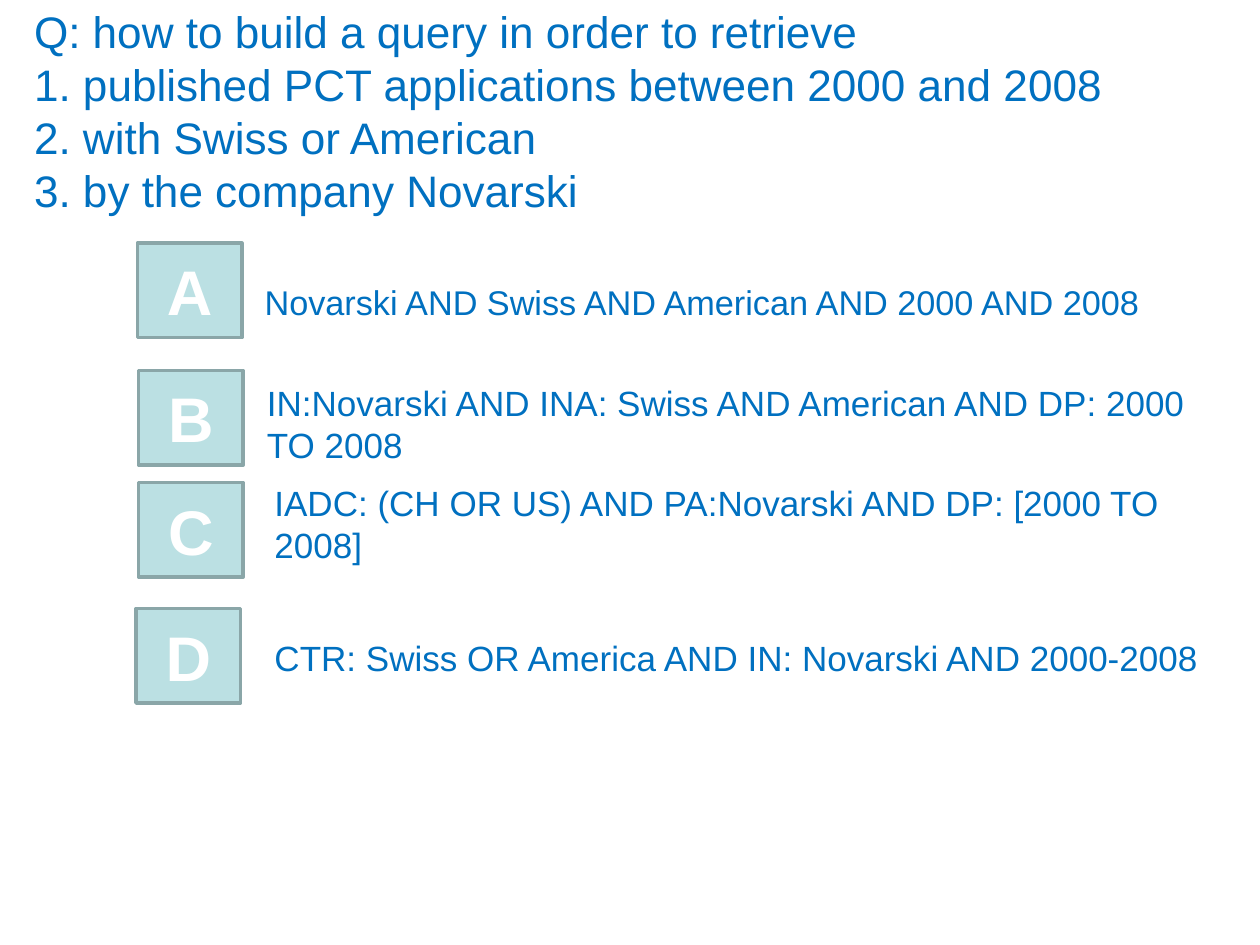
import pptx
import pptx.dml.color
import pptx.enum.shapes
import pptx.enum.text
import pptx.oxml
import pptx.util

Inches = pptx.util.Inches
ANCHOR = pptx.enum.text.MSO_ANCHOR
ALIGN = pptx.enum.text.PP_ALIGN
AUTO_SIZE = pptx.enum.text.MSO_AUTO_SIZE
BUTTON = pptx.enum.shapes.MSO_SHAPE.ACTION_BUTTON_CUSTOM

THEME = {
    "font": "Arial",
    "blue": "0070C0",
    "white": "FFFFFF",
    "button_fill": "BBE0E3",
    "button_line": "8AA6A8",
    "title_size": 25.2,
    "body_size": 19.6,
    "answer_size": 20,
    "letter_size": 36,
}
BUTTON_WIDTH, BUTTON_HEIGHT = 0.83, 0.75


def rgb(name):
    return pptx.dml.color.RGBColor.from_string(THEME[name])


def write_text(shape, text, size, color="blue", bold=False, align=ALIGN.LEFT,
               anchor=ANCHOR.TOP, auto_size=AUTO_SIZE.NONE):
    frame = shape.text_frame
    frame_format = {"word_wrap": True, "auto_size": auto_size, "vertical_anchor": anchor}
    for name, value in frame_format.items():
        setattr(frame, name, value)
    paragraph = frame.paragraphs[0]
    paragraph.text = text
    paragraph.alignment = align
    paragraph.space_before = pptx.util.Pt(0)
    font_format = {"name": THEME["font"], "size": pptx.util.Pt(THEME[size]), "bold": bold}
    for run in paragraph.runs:
        for name, value in font_format.items():
            setattr(run.font, name, value)
        run.font.color.rgb = rgb(color)


presentation = pptx.Presentation()
presentation.slide_width = Inches(10)
presentation.slide_height = Inches(7.5)
slide = presentation.slides.add_slide(presentation.slide_layouts[1])
title, body = slide.placeholders

# Question and first answer
placements = [(title, (0.17, 0.25, 9, 1.25)), (body, (2, 2.18, 7.67, 0.55))]
for shape, box in placements:
    for side, length in zip(("left", "top", "width", "height"), box):
        setattr(shape, side, Inches(length))

question = [
    "Q: how to build a query in order to retrieve",
    "1. published PCT applications between 2000 and 2008",
    "2. with Swiss or American",
    "3. by the company Novarski",
]
write_text(title, "\v".join(question), "title_size", anchor=ANCHOR.MIDDLE)

properties = body.text_frame.paragraphs[0]._p.get_or_add_pPr()
properties.set("marL", "0")
properties.set("indent", "0")
properties.append(pptx.oxml.parse_xml(
    '<a:buNone xmlns:a="http://schemas.openxmlformats.org/drawingml/2006/main"/>'))
write_text(body, "Novarski AND Swiss AND American AND 2000 AND 2008", "body_size")

# Lettered buttons
for letter, left, top in (("A", 1.09, 1.93), ("B", 1.1, 2.94), ("C", 1.1, 3.83), ("D", 1.08, 4.83)):
    button = slide.shapes.add_shape(
        BUTTON, Inches(left), Inches(top), Inches(BUTTON_WIDTH), Inches(BUTTON_HEIGHT))
    button.shadow.inherit = False
    button.fill.solid()
    button.fill.fore_color.rgb = rgb("button_fill")
    button.line.color.rgb = rgb("button_line")
    button.line.width = pptx.util.Pt(2)
    write_text(button, letter, "letter_size", "white", True, ALIGN.CENTER, ANCHOR.MIDDLE)

# Remaining answers
answers = [
    ("IN:Novarski AND INA: Swiss AND American AND DP: 2000 TO 2008", 2.02, 2.98, 7.76, 0.77),
    ("IADC: (CH OR US) AND PA:Novarski AND DP: [2000 TO 2008]", 2.08, 3.77, 7.76, 0.77),
    ("CTR: Swiss OR America AND IN: Novarski AND 2000-2008", 2.08, 5, 7.59, 0.44),
]
for text, *box in answers:
    answer = slide.shapes.add_textbox(*map(Inches, box))
    write_text(answer, text, "answer_size", auto_size=AUTO_SIZE.SHAPE_TO_FIT_TEXT)

presentation.save("out.pptx")
